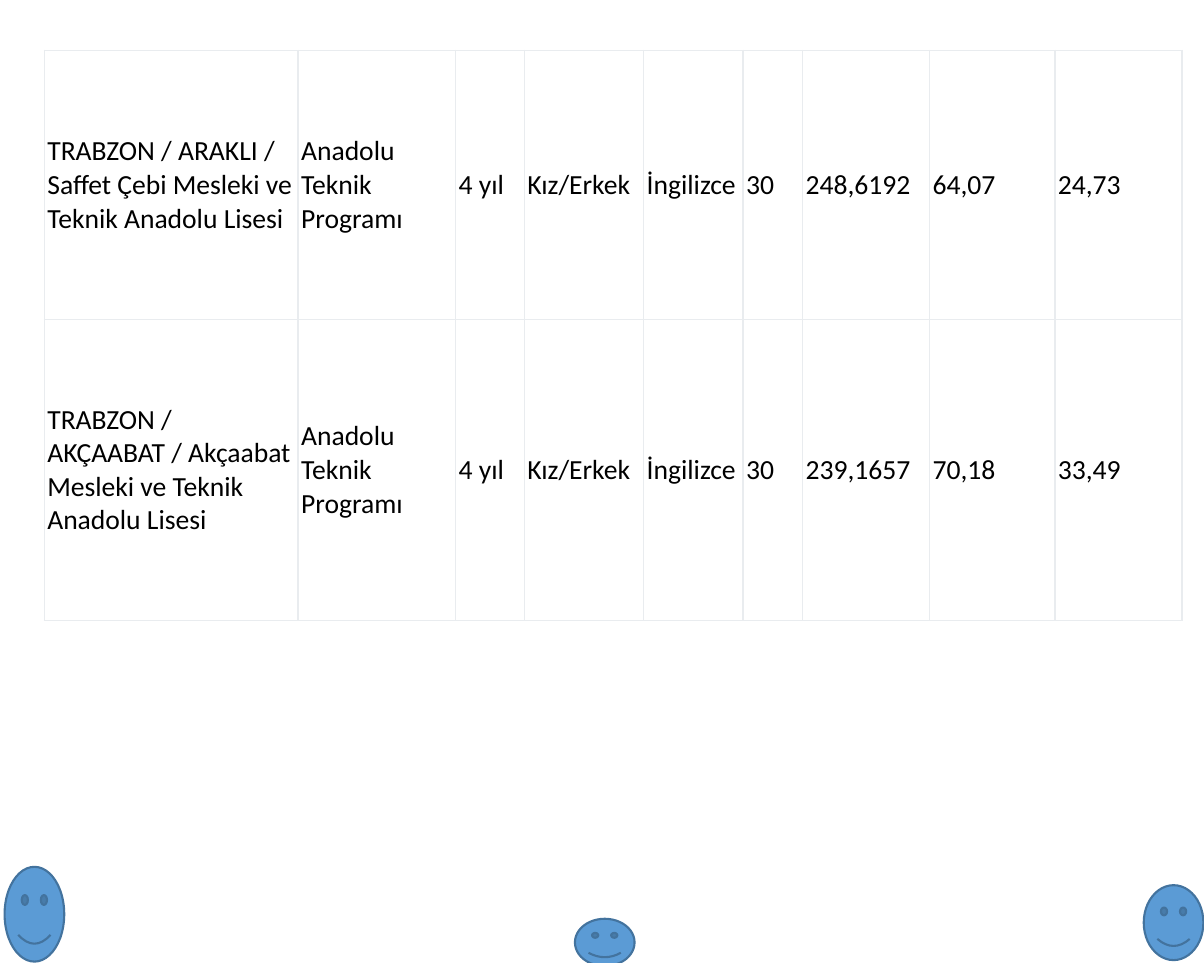
from typing import NamedTuple

from lxml import etree
from pptx import Presentation
from pptx import util as u
from pptx.dml.color import RGBColor
from pptx.enum import shapes, text
from pptx.oxml import ns

COLORS = {
    "text": "000000",
    "cell": "FFFFFF",
    "border": "E9ECEF",
    "face": "5B9BD5",
    "face_line": "43739E",
}


class School(NamedTuple):
    name: str
    quota: str
    score: str
    percentile: str
    local_percentile: str
    height: float

    def cells(self) -> list[str]:
        return [self.name, "Anadolu Teknik Programı", "4 yıl", "Kız/Erkek", "İngilizce",
                self.quota, self.score, self.percentile, self.local_percentile]


class Face(NamedTuple):
    left: float
    top: float
    height: float
    width: float = 0.39


COLUMN_WIDTHS = [1.66, 1.03, 0.45, 0.78, 0.65, 0.39, 0.83, 0.82, 0.83]
SCHOOLS = [
    School("TRABZON / ARAKLI / Saffet Çebi Mesleki ve Teknik Anadolu Lisesi",
           "30", "248,6192", "64,07", "24,73", 1.76),
    School("TRABZON / AKÇAABAT / Akçaabat Mesleki ve Teknik Anadolu Lisesi",
           "30", "239,1657", "70,18", "33,49", 1.97),
]
FACES = [Face(0.03, 5.67, 0.62), Face(7.48, 5.79, 0.49), Face(3.76, 6.01, 0.31)]


def rgb(name: str) -> RGBColor:
    return RGBColor.from_string(COLORS[name])


def add_borders(cell, color: str, width: float) -> None:
    tc_pr = cell._tc.get_or_add_tcPr()
    for side in ("lnL", "lnR", "lnT", "lnB"):
        ln = etree.SubElement(tc_pr, ns.qn(f"a:{side}"), w=str(u.Pt(width)))
        fill = etree.SubElement(ln, ns.qn("a:solidFill"))
        etree.SubElement(fill, ns.qn("a:srgbClr"), val=COLORS[color])


def write_cell(cell, value: str, *, size: float, font: str, color: str) -> None:
    add_borders(cell, "border", 0.75)
    cell.fill.solid()
    cell.fill.fore_color.rgb = rgb("cell")
    cell.margin_left = cell.margin_right = u.Inches(0.02)
    cell.margin_top = cell.margin_bottom = u.Inches(0.02)
    cell.vertical_anchor = text.MSO_ANCHOR.MIDDLE
    r = cell.text_frame.paragraphs[0].add_run()
    r.text = value
    r.font.size = u.Pt(size)
    r.font.name = font
    r.font.bold = False
    r.font.color.rgb = rgb(color)


def add_school_table(s, left: float, top: float) -> None:
    width = sum(COLUMN_WIDTHS)
    height = sum(school.height for school in SCHOOLS)
    table = s.shapes.add_table(len(SCHOOLS), len(COLUMN_WIDTHS), u.Inches(left),
                               u.Inches(top), u.Inches(width), u.Inches(height)).table
    table.first_row = table.horz_banding = False
    for column, column_width in zip(table.columns, COLUMN_WIDTHS):
        column.width = u.Inches(column_width)
    for row, school in zip(table.rows, SCHOOLS):
        row.height = u.Inches(school.height)
        for cell, value in zip(row.cells, school.cells()):
            write_cell(cell, value, size=13, font="Calibri", color="text")


def add_face(s, face: Face) -> None:
    sp = s.shapes.add_shape(shapes.MSO_SHAPE.SMILEY_FACE, u.Inches(face.left),
                            u.Inches(face.top), u.Inches(face.width), u.Inches(face.height))
    sp.shadow.inherit = False
    sp.fill.solid()
    sp.fill.fore_color.rgb = rgb("face")
    sp.line.color.rgb = rgb("face_line")
    sp.line.width = u.Pt(1)


def main() -> None:
    prs = Presentation()
    prs.slide_width, prs.slide_height = u.Cm(20), u.Cm(16)
    s = prs.slides.add_slide(prs.slide_layouts[6])
    add_school_table(s, 0.29, 0.33)
    for face in FACES:
        add_face(s, face)
    prs.save("out.pptx")


if __name__ == "__main__":
    main()
